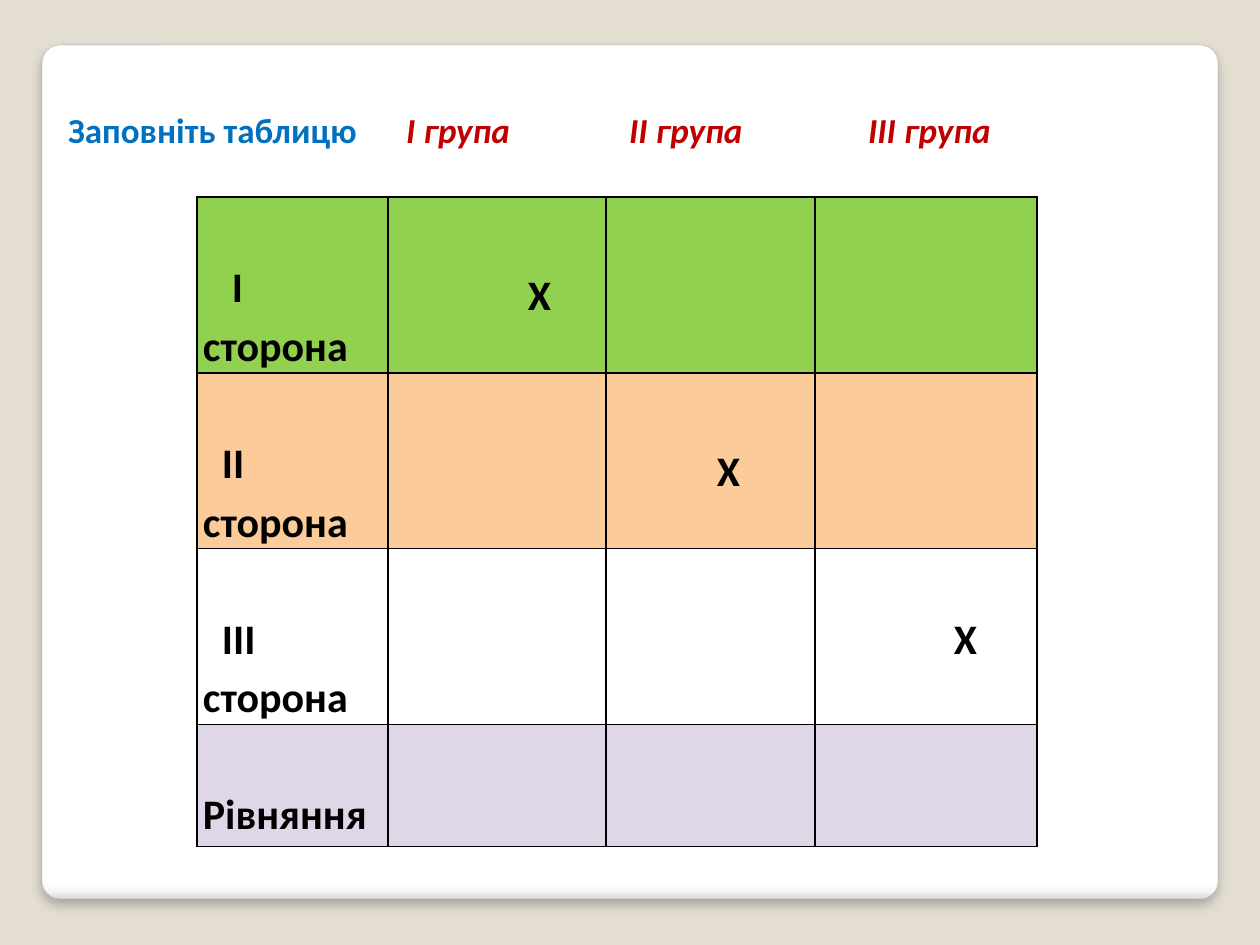
from dataclasses import dataclass
from typing import Optional

from lxml import etree
from pptx import Presentation
from pptx import util as u
from pptx.dml.color import RGBColor
from pptx.enum import shapes, text
from pptx.oxml import parse_xml
from pptx.oxml.ns import nsdecls, qn


@dataclass(frozen=True)
class Theme:
    font: str = "Calibri"
    background: str = "E3DED1"
    panel_edge: str = "A4A4A4"
    title: str = "0070C0"
    group: str = "C00000"
    ink: str = "000000"
    title_pt: int = 20
    cell_pt: int = 24
    line_spacing: float = 1.15


@dataclass(frozen=True)
class CellText:
    words: str
    indent: int = 0
    top: int = 58


@dataclass(frozen=True)
class Row:
    label: CellText
    height: int
    fill: Optional[str]
    mark_column: Optional[int] = None
    mark: Optional[CellText] = None


THEME = Theme()
COLUMNS = [191, 218, 209, 222]
ROWS = [
    Row(CellText("І сторона", 29), 169, "92D050", 1, CellText("X", 134, 66)),
    Row(CellText("ІІ сторона", 19), 169, "FBCC9A", 2, CellText("X", 105, 66)),
    Row(CellText("ІІІ сторона", 19), 169, None, 3, CellText("X", 133)),
    Row(CellText("Рівняння"), 122, "DFD7E7"),
]
GROUPS = ["І група", "ІІ група", "ІІІ група"]
GROUP_STOPS = [338, 561, 800]
PANEL_STOPS = [(0, "FFFFFF"), (98, "FFFFFF"), (99, "F7F7F7"), (100, "DADADA")]


def px(n: int) -> u.Emu:
    return u.Emu(round(n * 914400 / 126))


def rgb(value: str) -> RGBColor:
    return RGBColor.from_string(value)


def style_run(r, color: str, size: int, italic: bool = False) -> None:
    r.font.name = THEME.font
    r.font.size = u.Pt(size)
    r.font.bold = True
    r.font.italic = italic
    r.font.color.rgb = rgb(color)


def add_panel(s) -> None:
    sp = s.shapes.add_shape(shapes.MSO_SHAPE.ROUNDED_RECTANGLE,
                            px(42), px(45), px(1176), px(854))
    sp.adjustments[0] = 0.021
    sp.fill.gradient()
    sp.fill.gradient_angle = 270
    stops = sp._element.spPr.find(".//" + qn("a:gsLst"))
    for old in list(stops):
        stops.remove(old)
    for pos, color in PANEL_STOPS:
        gs = etree.SubElement(stops, qn("a:gs"), pos=str(pos * 1000))
        etree.SubElement(gs, qn("a:srgbClr"), val=color)
    sp.line.color.rgb = rgb(THEME.panel_edge)
    sp.line.width = u.Pt(0.16)
    sp._element.spPr.append(parse_xml(
        f'<a:effectLst {nsdecls("a")}><a:outerShdw blurRad="{u.Pt(6)}" dist="{u.Pt(4)}" '
        f'dir="5400000" algn="tl" rotWithShape="0"><a:srgbClr val="{THEME.ink}">'
        '<a:alpha val="25000"/></a:srgbClr></a:outerShdw></a:effectLst>'))
    s.shapes._spTree.insert(2, sp._element)  # behind the title


def set_title(s) -> None:
    sp = s.shapes.title
    sp.left, sp.top, sp.width, sp.height = px(68), px(98), px(1055), px(93)
    tf = sp.text_frame
    tf.auto_size = text.MSO_AUTO_SIZE.NONE
    tf.vertical_anchor = text.MSO_ANCHOR.TOP
    tf.margin_left = tf.margin_right = tf.margin_bottom = 0
    tf.margin_top = px(10)
    p = tf.paragraphs[0]
    p.alignment = text.PP_ALIGN.LEFT
    tabs = etree.SubElement(p._p.get_or_add_pPr(), qn("a:tabLst"))
    for stop in GROUP_STOPS:
        etree.SubElement(tabs, qn("a:tab"), pos=str(px(stop)), algn="l")
    r = p.add_run()
    r.text = "Заповніть таблицю"
    style_run(r, THEME.title, THEME.title_pt)
    for group in GROUPS:
        r = p.add_run()
        r.text = "\t" + group
        style_run(r, THEME.group, THEME.title_pt, italic=True)


def format_cell(cell, fill: Optional[str]) -> None:
    """Fill the cell and rule all four of its sides."""
    if fill:
        cell.fill.solid()
        cell.fill.fore_color.rgb = rgb(fill)
    else:
        cell.fill.background()
    for i, side in enumerate(("lnL", "lnR", "lnT", "lnB")):
        cell._tc.get_or_add_tcPr().insert(i, parse_xml(
            f'<a:{side} {nsdecls("a")} w="{u.Pt(1)}"><a:solidFill>'
            f'<a:srgbClr val="{THEME.ink}"/></a:solidFill></a:{side}>'))


def write_cell(cell, content: CellText) -> None:
    cell.margin_left = cell.margin_right = px(6)
    cell.margin_top, cell.margin_bottom = px(content.top), 0
    p = cell.text_frame.paragraphs[0]
    p.text = content.words
    p.line_spacing = THEME.line_spacing
    p._p.get_or_add_pPr().set("indent", str(px(content.indent)))
    style_run(p.runs[0], THEME.ink, THEME.cell_pt)


def add_sides_table(s) -> None:
    table = s.shapes.add_table(len(ROWS), len(COLUMNS), px(197), px(197), px(sum(COLUMNS)),
                               px(sum(row.height for row in ROWS))).table
    table.first_row = table.horz_banding = False
    for column, width in zip(table.columns, COLUMNS):
        column.width = px(width)
    for i, row in enumerate(ROWS):
        table.rows[i].height = px(row.height)
        for cell in table.rows[i].cells:
            format_cell(cell, row.fill)
        write_cell(table.cell(i, 0), row.label)
        if row.mark:
            write_cell(table.cell(i, row.mark_column), row.mark)


def main() -> None:
    prs = Presentation()
    prs.slide_width, prs.slide_height = px(1260), px(945)
    s = prs.slides.add_slide(prs.slide_layouts[5])
    s.background.fill.solid()
    s.background.fill.fore_color.rgb = rgb(THEME.background)
    add_panel(s)
    set_title(s)
    add_sides_table(s)
    prs.save("out.pptx")


if __name__ == "__main__":
    main()
